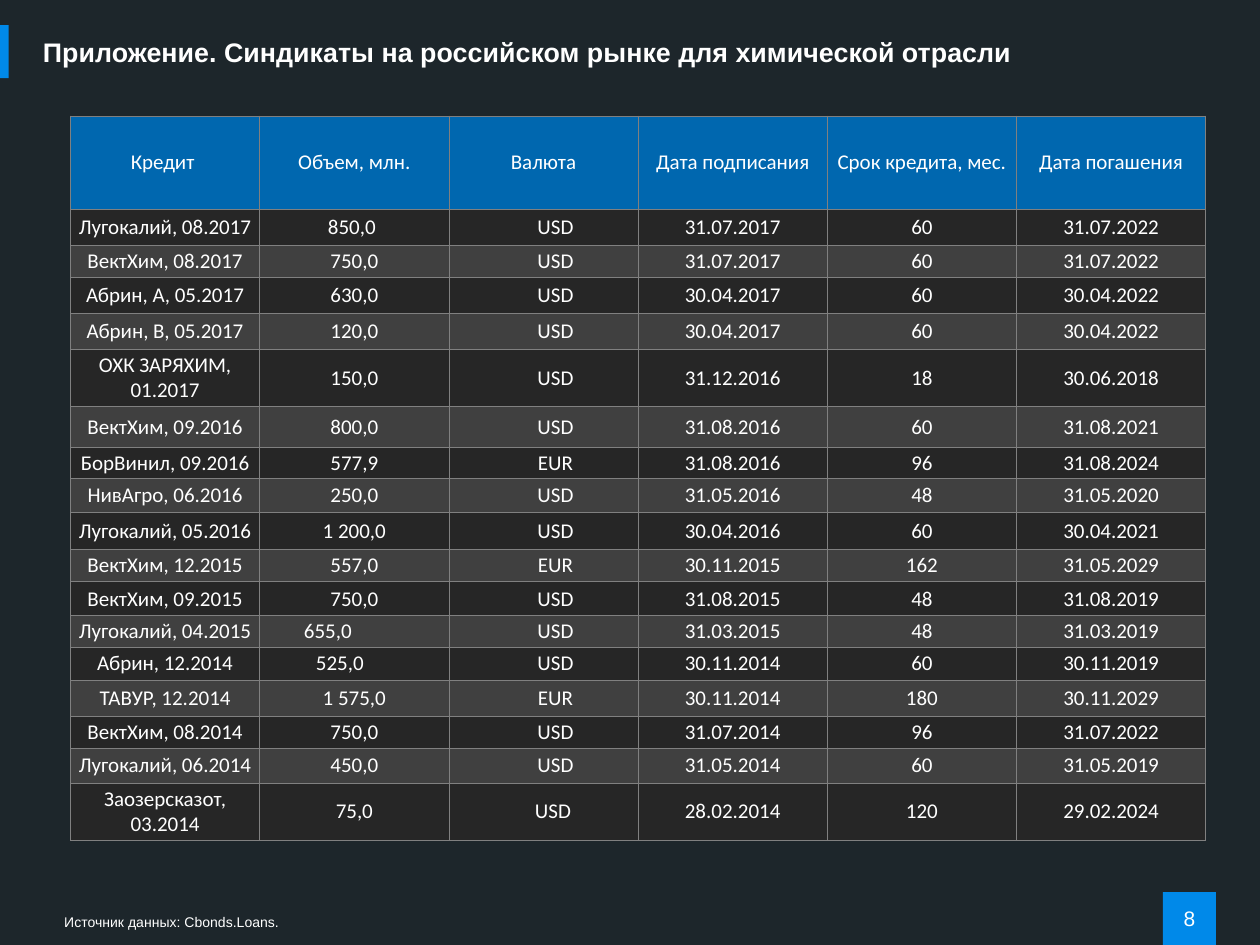
"""Build the slide listing syndicated loans of the chemical industry."""
from dataclasses import dataclass

import lxml.etree
import pptx
import pptx.dml.color
import pptx.enum.shapes
import pptx.enum.text
import pptx.oxml.ns
import pptx.util

Inches = pptx.util.Inches
Pt = pptx.util.Pt
PP_ALIGN = pptx.enum.text.PP_ALIGN
MSO_ANCHOR = pptx.enum.text.MSO_ANCHOR

COLORS = {
    "background": "1D262B",
    "accent": "0089E9",
    "header": "0067AF",
    "odd": "262626",
    "even": "404040",
    "border": "808080",
    "text": "FFFFFF",
}


@dataclass(frozen=True)
class Box:
    left: float
    top: float
    width: float
    height: float

    def emu(self) -> tuple:
        return tuple(Inches(v) for v in (self.left, self.top, self.width, self.height))


@dataclass(frozen=True)
class Loan:
    name: str
    volume: str
    currency: str
    signed: str
    months: str
    repaid: str
    height: float
    volume_right: float = 0
    currency_left: float = 0.19

    def texts(self) -> list:
        return [self.name, self.volume, self.currency, self.signed, self.months, self.repaid]


HEADERS = ["Кредит", "Объем, млн.", "Валюта", "Дата подписания", "Срок кредита, мес.", "Дата погашения"]
HEADER_HEIGHT = 0.74
TABLE_BOX = Box(0.56, 0.92, 9.01, 5.75)
ACCENTS = [Box(9.23, 7.08, 0.42, 0.42), Box(0, 0.2, 0.07, 0.42)]
LOANS = [
    Loan("Лугокалий, 08.2017", "850,0", "USD", "31.07.2017", "60", "31.07.2022", 0.29, volume_right=0.04),
    Loan("ВектХим, 08.2017", "750,0", "USD", "31.07.2017", "60", "31.07.2022", 0.25),
    Loan("Абрин, A, 05.2017", "630,0", "USD", "30.04.2017", "60", "30.04.2022", 0.29),
    Loan("Абрин, B, 05.2017", "120,0", "USD", "30.04.2017", "60", "30.04.2022", 0.28),
    Loan("ОХК ЗАРЯХИМ, 01.2017", "150,0", "USD", "31.12.2016", "18", "30.06.2018", 0.46),
    Loan("ВектХим, 09.2016", "800,0", "USD", "31.08.2016", "60", "31.08.2021", 0.32),
    Loan("БорВинил, 09.2016", "577,9", "EUR", "31.08.2016", "96", "31.08.2024", 0.25),
    Loan("НивАгро, 06.2016", "250,0", "USD", "31.05.2016", "48", "31.05.2020", 0.27),
    Loan("Лугокалий, 05.2016", "1 200,0", "USD", "30.04.2016", "60", "30.04.2021", 0.29),
    Loan("ВектХим, 12.2015", "557,0", "EUR", "30.11.2015", "162", "31.05.2029", 0.26),
    Loan("ВектХим, 09.2015", "750,0", "USD", "31.08.2015", "48", "31.08.2019", 0.27),
    Loan("Лугокалий, 04.2015", "655,0", "USD", "31.03.2015", "48", "31.03.2019", 0.25, volume_right=0.42),
    Loan("Абрин, 12.2014", "525,0", "USD", "30.11.2014", "60", "30.11.2019", 0.26, volume_right=0.23),
    Loan("ТАВУР, 12.2014", "1 575,0", "EUR", "30.11.2014", "180", "30.11.2029", 0.29),
    Loan("ВектХим, 08.2014", "750,0", "USD", "31.07.2014", "96", "31.07.2022", 0.25),
    Loan("Лугокалий, 06.2014", "450,0", "USD", "31.05.2014", "60", "31.05.2019", 0.28),
    Loan("Заозерсказот, 03.2014", "75,0", "USD", "28.02.2014", "120", "29.02.2024", 0.45, currency_left=0.15),
]


def rgb(key: str) -> pptx.dml.color.RGBColor:
    """Return the named colour."""
    return pptx.dml.color.RGBColor.from_string(COLORS[key])


def write(tf, text: str, size: float, font: str, align=PP_ALIGN.LEFT, bold: bool = False) -> None:
    """Write one run of text into a frame."""
    p = tf.paragraphs[0]
    p.alignment = align
    r = p.add_run()
    r.text = text
    r.font.size = Pt(size)
    r.font.name = font
    r.font.bold = bold
    r.font.color.rgb = rgb("text")


def add_accent(s, box: Box) -> None:
    """Draw a plain accent rectangle."""
    sp = s.shapes.add_shape(pptx.enum.shapes.MSO_SHAPE.RECTANGLE, *box.emu())
    sp.shadow.inherit = False
    sp.fill.solid()
    sp.fill.fore_color.rgb = rgb("accent")
    sp.line.fill.background()


def set_title(s, box: Box, text: str) -> None:
    """Place and format the title placeholder."""
    sp = s.shapes.title
    sp.left, sp.top, sp.width, sp.height = box.emu()
    tf = sp.text_frame
    tf.word_wrap = True
    tf.vertical_anchor = MSO_ANCHOR.MIDDLE
    write(tf, text, 15.3, "Arial", bold=True)


def add_text(s, box: Box, text: str, size: float, align, anchor, inset: float) -> None:
    """Add a text box with equal insets."""
    tf = s.shapes.add_textbox(*box.emu()).text_frame
    tf.word_wrap = True
    tf.vertical_anchor = anchor
    tf.margin_left = tf.margin_top = tf.margin_right = tf.margin_bottom = Inches(inset)
    write(tf, text, size, "Arial", align)


def add_borders(cell) -> None:
    """Give a cell thin borders on all sides."""
    qn = pptx.oxml.ns.qn
    tc_pr = cell._tc.get_or_add_tcPr()
    for side in ("a:lnL", "a:lnR", "a:lnT", "a:lnB"):
        ln = lxml.etree.SubElement(tc_pr, qn(side), w=str(Pt(0.5)))
        fill = lxml.etree.SubElement(ln, qn("a:solidFill"))
        lxml.etree.SubElement(fill, qn("a:srgbClr"), val=COLORS["border"])


def fill_cell(cell, text: str, color: str) -> None:
    """Format one table cell and write its text."""
    add_borders(cell)
    cell.fill.solid()
    cell.fill.fore_color.rgb = rgb(color)
    cell.vertical_anchor = MSO_ANCHOR.MIDDLE
    cell.margin_left = cell.margin_top = cell.margin_right = cell.margin_bottom = 0
    write(cell.text_frame, text, 12, "Calibri", PP_ALIGN.CENTER)


def add_loan_table(s, box: Box, loans: list) -> None:
    """Add the table of loans."""
    table = s.shapes.add_table(len(loans) + 1, len(HEADERS), *box.emu()).table
    for column in table.columns:
        column.width = Inches(box.width / len(HEADERS))
    table.rows[0].height = Inches(HEADER_HEIGHT)
    for col, text in enumerate(HEADERS):
        fill_cell(table.cell(0, col), text, "header")
    table.cell(0, 0).margin_right = Inches(0.04)
    for row, loan in enumerate(loans, start=1):
        table.rows[row].height = Inches(loan.height)
        for col, text in enumerate(loan.texts()):
            fill_cell(table.cell(row, col), text, "odd" if row % 2 else "even")
        table.cell(row, 1).margin_right = Inches(loan.volume_right)
        table.cell(row, 2).margin_left = Inches(loan.currency_left)


def main() -> None:
    """Build and save the presentation."""
    prs = pptx.Presentation()
    prs.slide_width, prs.slide_height = Inches(10), Inches(7.5)
    s = prs.slides.add_slide(prs.slide_layouts[5])
    s.background.fill.solid()
    s.background.fill.fore_color.rgb = rgb("background")
    for box in ACCENTS:
        add_accent(s, box)
    set_title(s, Box(0.24, 0.11, 8.63, 0.6), "Приложение. Синдикаты на российском рынке для химической отрасли")
    add_loan_table(s, TABLE_BOX, LOANS)
    add_text(s, Box(0.51, 7.25, 6.49, 0.21), "Источник данных: Cbonds.Loans.", 8,
             PP_ALIGN.LEFT, MSO_ANCHOR.TOP, 0)
    add_text(s, Box(8.97, 7.15, 0.94, 0.27), "8", 12, PP_ALIGN.CENTER, MSO_ANCHOR.MIDDLE, 0.05)
    prs.save("out.pptx")


if __name__ == "__main__":
    main()
